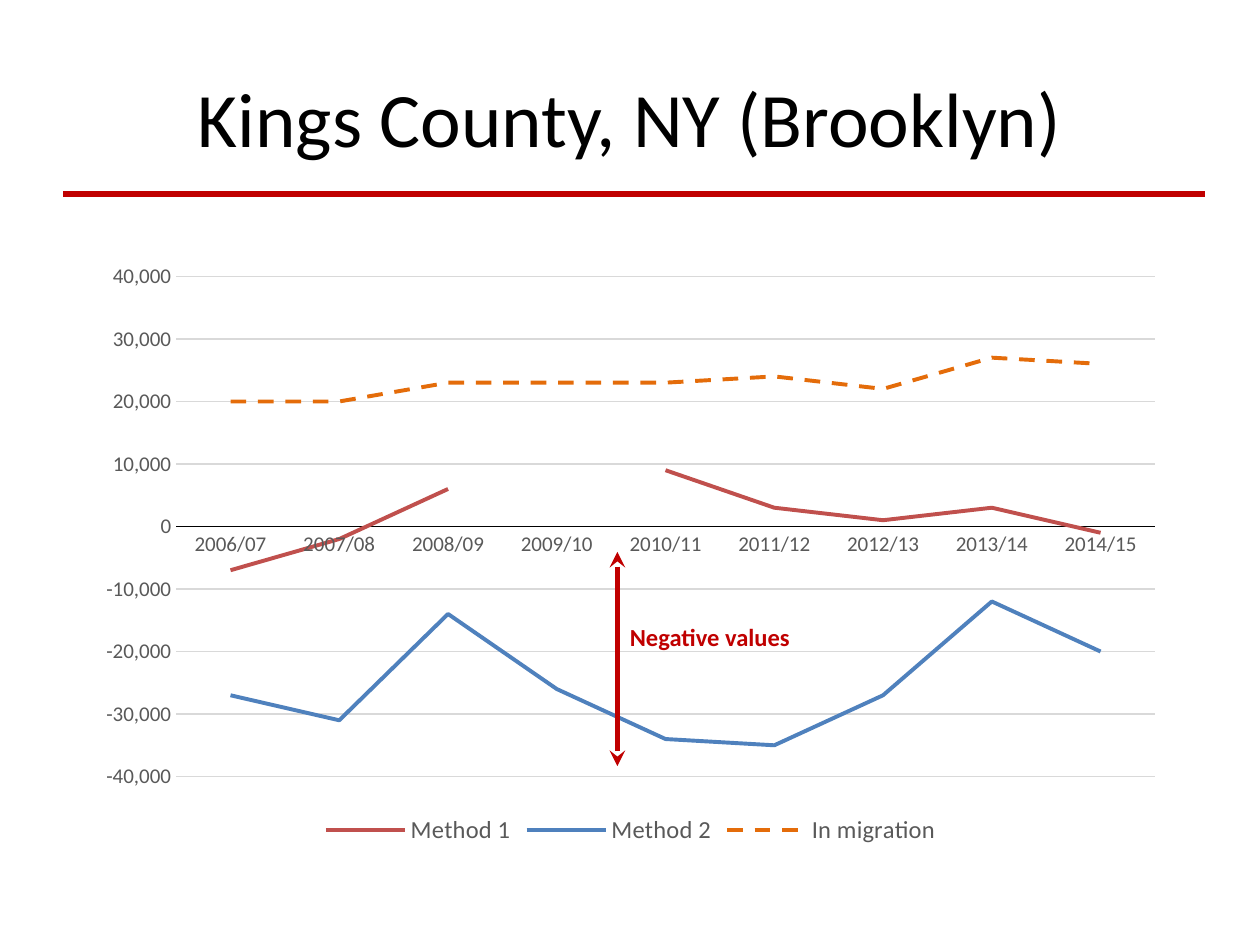
from lxml import etree
from pptx import Presentation
from pptx.chart.data import CategoryChartData
from pptx.dml.color import RGBColor
from pptx.enum.chart import XL_CHART_TYPE, XL_LEGEND_POSITION, XL_TICK_MARK
from pptx.enum.dml import MSO_LINE
from pptx.enum.shapes import MSO_CONNECTOR
from pptx.enum.text import MSO_ANCHOR, MSO_AUTO_SIZE, PP_ALIGN
from pptx.oxml.ns import qn
from pptx.util import Emu, Pt

LINE_CHART = XL_CHART_TYPE.LINE
LEGEND_BOTTOM = XL_LEGEND_POSITION.BOTTOM
NO_TICK = XL_TICK_MARK.NONE
DASH = MSO_LINE.DASH
STRAIGHT = MSO_CONNECTOR.STRAIGHT
MIDDLE = MSO_ANCHOR.MIDDLE
GROW = MSO_AUTO_SIZE.SHAPE_TO_FIT_TEXT
CENTER = PP_ALIGN.CENTER

EMU_PER_PX = 9144
FONT = "Calibri"
COLORS = {
    "title": "000000",
    "accent": "C00000",
    "label": "595959",
    "grid": "D9D9D9",
    "axis": "000000",
    "method_1": "C0504D",
    "method_2": "4F81BD",
    "migration": "E46C0A",
}
YEARS = [f"20{year:02d}/{year + 1:02d}" for year in range(6, 15)]
SERIES = [
    ("Method 1", "method_1", None,
     [-7000, -2000, 6000, None, 9000, 3000, 1000, 3000, -1000]),
    ("Method 2", "method_2", None,
     [-27000, -31000, -14000, -26000, -34000, -35000, -27000, -12000, -20000]),
    ("In migration", "migration", DASH,
     [20000, 20000, 23000, 23000, 23000, 24000, 22000, 27000, 26000]),
]


def px(*lengths):
    return [Emu(length * EMU_PER_PX) for length in lengths]


def color(name):
    return RGBColor.from_string(COLORS[name])


def style_font(font, size, name, bold=False):
    font.name = FONT
    font.size = Pt(size)
    font.bold = bold
    font.color.rgb = color(name)


def style_line(line, name, width):
    line.color.rgb = color(name)
    line.width = Pt(width)


def add_line(shapes, start, end, name, width, arrowhead=None):
    connector = shapes.add_connector(STRAIGHT, *px(*start, *end))
    style_line(connector.line, name, width)
    if arrowhead:
        outline = connector.line._get_or_add_ln()
        for tag in ("a:headEnd", "a:tailEnd"):
            etree.SubElement(outline, qn(tag), type=arrowhead)
    etree.SubElement(connector._element.spPr, qn("a:effectLst"))


def add_heading(page, left, top, width, height):
    add_line(page.shapes, (left, top + 124), (left + width + 6, top + 124),
             "accent", 3)
    title = page.shapes.title
    title.left, title.top, title.width, title.height = px(left, top, width, height)
    frame = title.text_frame
    frame.text = "Kings County, NY (Brooklyn)"
    frame.vertical_anchor = MIDDLE
    para = frame.paragraphs[0]
    para.alignment = CENTER
    style_font(para.runs[0].font, 44, "title")


def add_migration_chart(page, left, top, width, height):
    data = CategoryChartData(number_format="#,##0")
    data.categories = YEARS
    for name, _, _, values in SERIES:
        data.add_series(name, values)
    chart = page.shapes.add_chart(
        LINE_CHART, *px(left, top, width, height), data).chart
    chart.has_title = False
    style_font(chart.font, 10, "title")

    plot = chart.plots[0]
    plot.vary_by_categories = False
    for series, (_, name, dash, _) in zip(plot.series, SERIES):
        series.smooth = False
        style_line(series.format.line, name, 2.25)
        if dash:
            series.format.line.dash_style = dash

    years, people = chart.category_axis, chart.value_axis
    for axis in (years, people):
        axis.major_tick_mark = axis.minor_tick_mark = NO_TICK
        style_font(axis.tick_labels.font, 12, "label")
    style_line(years.format.line, "axis", 0.75)
    people.format.line.fill.background()
    people.minimum_scale, people.maximum_scale = -40000, 40000
    people.major_unit = 10000
    people.tick_labels.number_format = "#,##0"
    people.tick_labels.number_format_is_linked = False
    people.has_major_gridlines = True
    style_line(people.major_gridlines.format.line, "grid", 0.75)

    chart.has_legend = True
    chart.legend.position = LEGEND_BOTTOM
    chart.legend.include_in_layout = False
    style_font(chart.legend.font, 14, "label")


def add_negative_marker(page, left, top, width, height):
    group = page.shapes.add_group_shape()
    add_line(group.shapes, (left, top), (left, top + height),
             "accent", 3, "stealth")
    box = group.shapes.add_textbox(*px(left, top + 51, width, 34))
    frame = box.text_frame
    frame.word_wrap = True
    frame.auto_size = GROW
    frame.text = "Negative values"
    style_font(frame.paragraphs[0].runs[0].font, 14, "accent", bold=True)


def main():
    deck = Presentation()
    deck.slide_width, deck.slide_height = px(1000, 750)
    page = deck.slides.add_slide(deck.slide_layouts.get_by_name("Title Only"))
    add_heading(page, 50, 30, 900, 125)
    add_migration_chart(page, 67, 200, 867, 475)
    add_negative_marker(page, 490, 438, 162, 170)
    deck.save("out.pptx")


if __name__ == "__main__":
    main()
